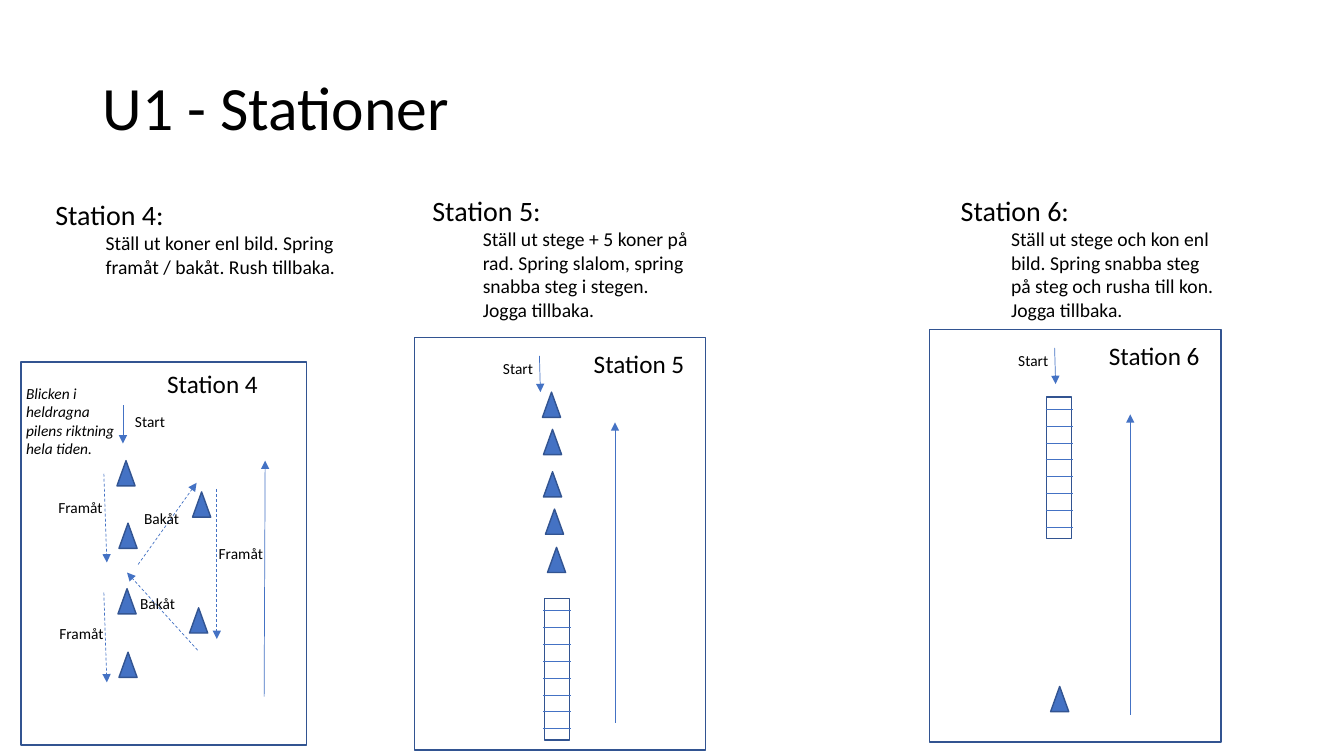
from lxml import etree
from pptx import Presentation
from pptx.dml.color import RGBColor
from pptx.enum.dml import MSO_LINE
from pptx.enum.shapes import MSO_CONNECTOR, MSO_SHAPE
from pptx.enum.text import MSO_ANCHOR, MSO_AUTO_SIZE, PP_ALIGN
from pptx.oxml.ns import qn
from pptx.util import Inches, Pt

RECTANGLE = MSO_SHAPE.RECTANGLE
TRIANGLE = MSO_SHAPE.ISOSCELES_TRIANGLE
STRAIGHT = MSO_CONNECTOR.STRAIGHT
DASH = MSO_LINE.DASH
MIDDLE = MSO_ANCHOR.MIDDLE
LEFT = PP_ALIGN.LEFT
GROW = MSO_AUTO_SIZE.SHAPE_TO_FIT_TEXT
NO_RESIZE = MSO_AUTO_SIZE.NONE

FONT = "Calibri"
BLACK, BLUE, DARK_BLUE = "000000", "4472C4", "325491"
RUNG_COUNT, RUNG_GAP = 8, 0.167


def color(value):
    """Turn a hex string into a colour."""
    return RGBColor.from_string(value)


def write(para, text, size=11, italic=False, indent=0):
    """Write formatted text into a paragraph."""
    span = para.add_run()
    span.text = text
    span.font.name = FONT
    span.font.size = Pt(size)
    span.font.italic = italic
    span.font.color.rgb = color(BLACK)
    para.alignment = LEFT
    if indent:
        para.level = 1
        properties = para._p.get_or_add_pPr()
        properties.set("marL", str(Inches(indent)))
        properties.set("indent", "0")


class StationPage:
    """Holds the current slide and draws training drills on it."""

    def __init__(self, deck):
        """Add a title-only slide."""
        self.page = deck.slides.add_slide(deck.slide_layouts[5])
        self.shapes = self.page.shapes

    def title(self, text):
        """Place and format the title."""
        box = self.shapes.title
        box.left, box.top = Inches(0.92), Inches(0.37)
        box.width, box.height = Inches(11.5), Inches(1.45)
        frame = box.text_frame
        frame.vertical_anchor = MIDDLE
        frame.word_wrap = True
        frame.auto_size = NO_RESIZE
        para = frame.paragraphs[0]
        para.line_spacing = 0.9
        write(para, text, size=44)

    def text(self, left, top, width, height, text, wrap=True, **style):
        """Add a text box and return its frame."""
        box = self.shapes.add_textbox(
            Inches(left), Inches(top), Inches(width), Inches(height))
        frame = box.text_frame
        frame.word_wrap = wrap
        frame.auto_size = GROW
        write(frame.paragraphs[0], text, **style)
        return frame

    def label(self, left, top, text, width=0.65):
        """Add a small label."""
        self.text(left, top, width, 0.29, text)

    def instructions(self, left, top, width, height, heading, body):
        """Add a station heading with its indented instructions."""
        frame = self.text(left, top, width, height, heading, size=20)
        write(frame.add_paragraph(), body, size=14, indent=0.5)

    def shape(self, kind, left, top, width, height, fill=None):
        """Add an outlined shape."""
        shape = self.shapes.add_shape(
            kind, Inches(left), Inches(top), Inches(width), Inches(height))
        shape.shadow.inherit = False
        shape.line.color.rgb = color(DARK_BLUE)
        shape.line.width = Pt(1)
        if fill:
            shape.fill.solid()
            shape.fill.fore_color.rgb = color(fill)
        else:
            shape.fill.background()

    def cone(self, left, top):
        """Add a cone."""
        self.shape(TRIANGLE, left, top, 0.18, 0.25, fill=BLUE)

    def line(self, x1, y1, x2, y2, arrow=True, dashed=False):
        """Add a thin line, by default with an arrowhead."""
        line = self.shapes.add_connector(
            STRAIGHT, Inches(x1), Inches(y1), Inches(x2), Inches(y2))
        line.line.color.rgb = color(BLUE)
        line.line.width = Pt(0.5)
        if dashed:
            line.line.dash_style = DASH
        if arrow:
            outline = line.line._get_or_add_ln()
            etree.SubElement(outline, qn("a:tailEnd"), type="triangle")
        etree.SubElement(line._element.spPr, qn("a:effectLst"))

    def ladder(self, left, top):
        """Add a ladder with evenly spaced rungs."""
        self.shape(RECTANGLE, left, top, 0.25, 1.4)
        for rung in range(RUNG_COUNT):
            y = top + 0.12 + rung * RUNG_GAP
            self.line(left - 0.01, y, left + 0.26, y, arrow=False)

    def field(self, left, top, name):
        """Add a field with its name, start arrow and way back."""
        self.shape(RECTANGLE, left, top, 2.89, 4.09)
        self.text(left + 1.68, top + 0.06, 1.11, 0.4, name, wrap=False, size=18)
        self.label(left + 0.78, top + 0.16, "Start", width=0.51)
        self.line(left + 1.24, top + 0.18, left + 1.25, top + 0.54)
        self.line(left + 1.99, top + 3.82, left + 1.99, top + 0.84)

    def zigzag_field(self):
        """Draw the drill of station 4."""
        self.shape(RECTANGLE, 0.21, 3.59, 2.83, 3.8)
        self.text(1.56, 3.61, 1.11, 0.4, "Station 4", wrap=False, size=18)
        self.text(0.16, 3.76, 1.09, 0.84,
                  "Blicken i heldragna pilens riktning hela tiden.", italic=True)
        self.label(1.24, 4.04, "Start", width=0.51)
        self.line(1.22, 4.02, 1.22, 4.4)
        self.line(2.62, 6.91, 2.63, 4.57)
        for left, top in [(1.16, 4.57), (1.91, 4.88), (1.18, 5.19),
                          (1.17, 5.84), (1.88, 6.03), (1.18, 6.47)]:
            self.cone(left, top)
        for ends in [(1.03, 4.7, 1.06, 5.58), (1.37, 5.6, 1.95, 4.79),
                     (2.15, 4.85, 2.15, 6.34), (1.96, 6.45, 1.26, 5.68),
                     (1.03, 5.88, 1.06, 6.77)]:
            self.line(*ends, dashed=True)
        for left, top in [(0.48, 4.89), (2.07, 5.35), (0.49, 6.14)]:
            self.label(left, top, "Framåt")
        for left, top in [(1.33, 5), (1.29, 5.84)]:
            self.label(left, top, "Bakåt")


def main():
    """Build the deck."""
    deck = Presentation()
    deck.slide_width, deck.slide_height = Inches(13.33), Inches(7.5)
    page = StationPage(deck)
    page.title("U1 - Stationer")
    page.instructions(
        0.45, 1.91, 3.16, 0.91, "Station 4:",
        "Ställ ut koner enl bild. Spring framåt / bakåt. Rush tillbaka.")
    page.instructions(
        4.19, 1.87, 2.76, 1.38, "Station 5:",
        "Ställ ut stege + 5 koner på rad. Spring slalom, spring snabba steg "
        "i stegen. Jogga tillbaka.")
    page.instructions(
        9.43, 1.87, 2.76, 1.38, "Station 6:",
        "Ställ ut stege och kon enl bild. Spring snabba steg på steg och "
        "rusha till kon. Jogga tillbaka.")

    page.zigzag_field()

    page.field(4.11, 3.35, "Station 5")
    for left, top in [(5.38, 3.89), (5.39, 4.26), (5.39, 4.68),
                      (5.41, 5.05), (5.43, 5.43)]:
        page.cone(left, top)
    page.ladder(5.4, 5.94)

    page.field(9.22, 3.27, "Station 6")
    page.ladder(10.38, 3.94)
    page.cone(10.42, 6.81)
    deck.save("out.pptx")


if __name__ == "__main__":
    main()
